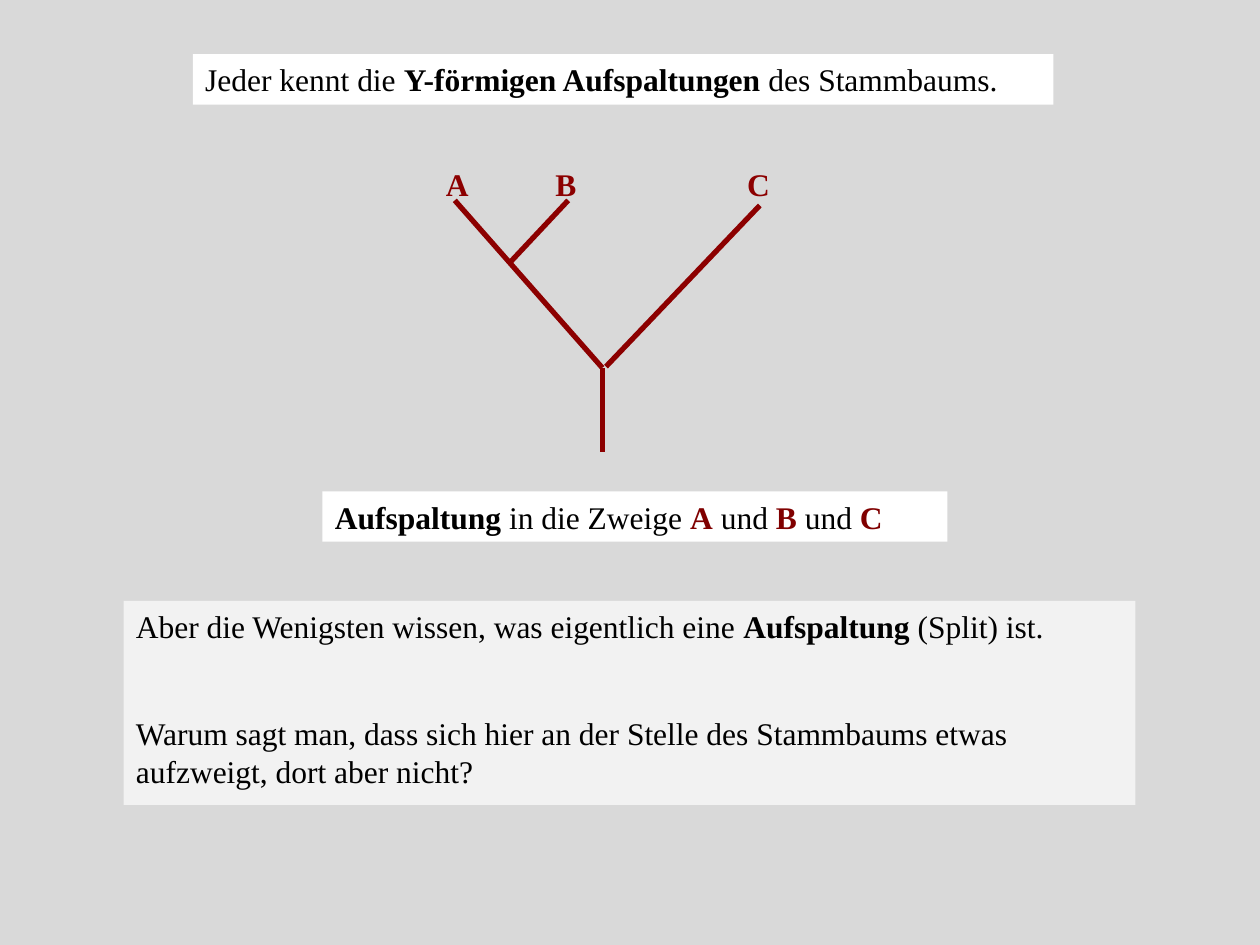
"""Build a slide on the Y-shaped splits of a phylogenetic tree."""
import pptx
import pptx.dml.color
import pptx.enum.shapes
import pptx.enum.text
import pptx.oxml
import pptx.util

Pt = pptx.util.Pt
COLORS = {"back": "D9D9D9", "white": "FFFFFF", "pale": "F2F2F2",
          "text": "000000", "branch": "8C0000", "letter": "800000"}
FONT, SIZE = "Times New Roman", 18
PARAGRAPH_GAP = 39.4

BRANCHES = [
    (344.2, 210.2, 344.2, 258.5),
    (259.9, 114.5, 344.2, 210.2),
    (346.3, 209.5, 434.2, 117.4),
    (324.7, 114.5, 291.6, 149.8),
]
LABEL_TOP, LABEL_WIDTH, LINE_HEIGHT = 90.7, 30.2, 28.8
LABELS = [("A", 247.7), ("B", 310.3), ("C", 419.8)]

PLAIN, BOLD, LETTER = ("text", False), ("text", True), ("letter", True)
PANELS = [
    ((184.3, 280.8, 357.1, LINE_HEIGHT), "white", [
        [("Aufspaltung", BOLD), (" in die Zweige ", PLAIN), ("A", LETTER),
         (" und ", PLAIN), ("B", LETTER), (" und ", PLAIN), ("C", LETTER)]]),
    ((110.2, 31, 491.8, LINE_HEIGHT), "white", [
        [("Jeder kennt die ", PLAIN), ("Y-förmigen Aufspaltungen ", BOLD),
         ("des Stammbaums.", PLAIN)]]),
    ((70.6, 343.4, 578.2, 116.6), "pale", [
        [("Aber die Wenigsten wissen, was eigentlich eine ", PLAIN),
         ("Aufspaltung", BOLD), (" (Split) ist.", PLAIN)],
        [("Warum sagt man, dass sich hier an der Stelle des Stammbaums etwas "
          "aufzweigt, dort aber nicht?", PLAIN)]]),
]


def rgb(name):
    return pptx.dml.color.RGBColor.from_string(COLORS[name])


def write(sp, paragraphs):
    tf = sp.text_frame
    tf.word_wrap = True
    tf.vertical_anchor = pptx.enum.text.MSO_ANCHOR.TOP
    for i, runs in enumerate(paragraphs):
        p = tf.add_paragraph() if i else tf.paragraphs[0]
        p.alignment = pptx.enum.text.PP_ALIGN.LEFT
        p.space_before = Pt(PARAGRAPH_GAP if i else 0)
        p.font.name, p.font.size = FONT, Pt(SIZE)
        for text, (color, bold) in runs:
            r = p.add_run()
            r.text = text
            r.font.bold = bold
            r.font.color.rgb = rgb(color)


def add_branch(shapes, ends):
    line = shapes.add_connector(
        pptx.enum.shapes.MSO_CONNECTOR.STRAIGHT, *map(Pt, ends))
    line.line.color.rgb = rgb("branch")
    line.line.width = Pt(3)
    line._element.spPr.append(pptx.oxml.parse_xml(
        '<a:effectLst xmlns:a="http://schemas.openxmlformats.org/drawingml/2006/main"/>'))


def add_panel(shapes, box, fill, paragraphs):
    sp = shapes.add_shape(
        pptx.enum.shapes.MSO_SHAPE.RECTANGLE, *map(Pt, box))
    sp.shadow.inherit = False
    sp.fill.solid()
    sp.fill.fore_color.rgb = rgb(fill)
    sp.line.fill.background()
    write(sp, paragraphs)


def main():
    prs = pptx.Presentation()
    prs.slide_width, prs.slide_height = Pt(720), Pt(540)
    s = prs.slides.add_slide(prs.slide_layouts[6])
    s.background.fill.solid()
    s.background.fill.fore_color.rgb = rgb("back")
    for ends in BRANCHES:
        add_branch(s.shapes, ends)
    for text, left in LABELS:
        box = (left, LABEL_TOP, LABEL_WIDTH, LINE_HEIGHT)
        write(s.shapes.add_textbox(*map(Pt, box)), [[(text, ("branch", True))]])
    for panel in PANELS:
        add_panel(s.shapes, *panel)
    prs.save("out.pptx")


if __name__ == "__main__":
    main()
